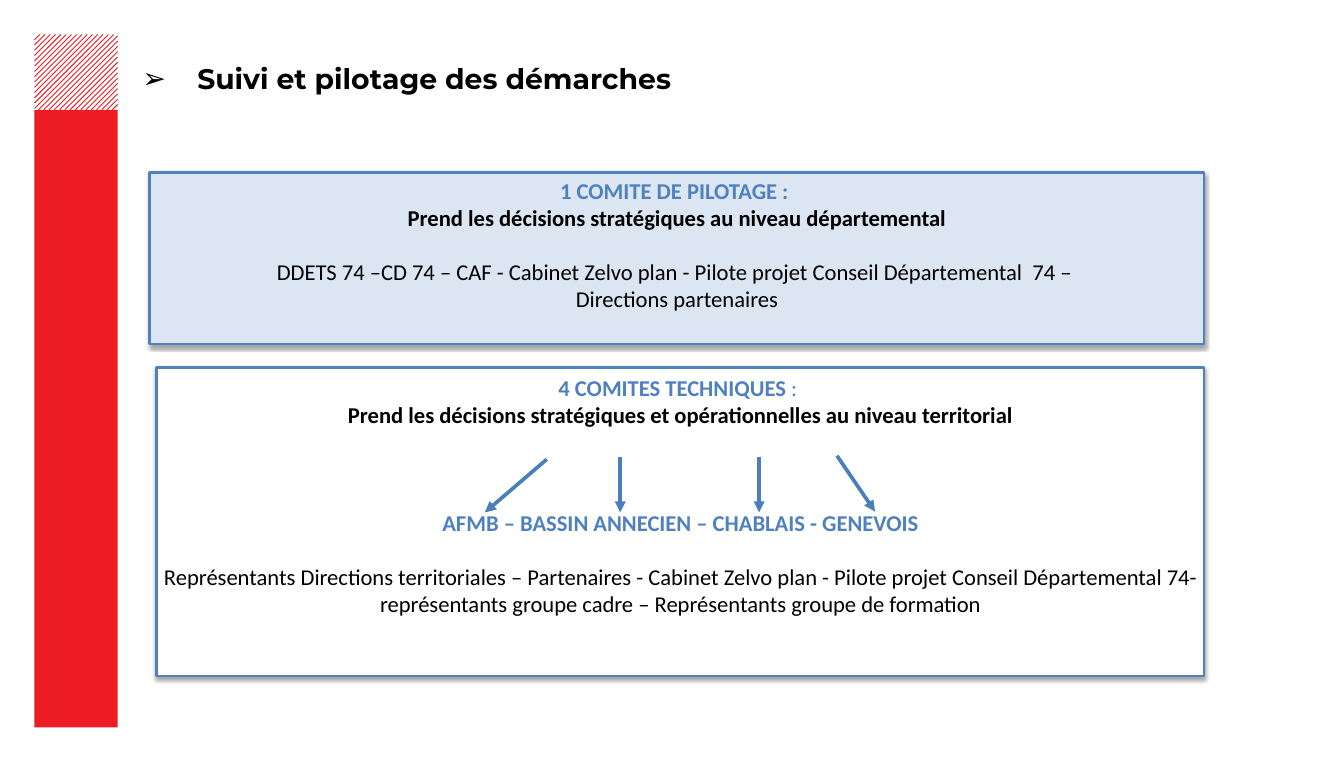
"""Build the slide on how the committees follow and steer the initiatives."""
from lxml.etree import SubElement
from pptx import Presentation
from pptx.dml.color import RGBColor
from pptx.enum.shapes import MSO_CONNECTOR, MSO_SHAPE
from pptx.enum.text import MSO_ANCHOR, MSO_AUTO_SIZE, PP_ALIGN
from pptx.oxml.ns import qn
from pptx.util import Inches, Pt

COLORS = {"red": "ED1C24", "blue": "4F81BD", "arrow": "4B7EBC",
          "pale": "DCE6F2", "white": "FFFFFF", "black": "000000"}


def color(name):
    return RGBColor.from_string(COLORS[name])


def add_line(slide, start, end, line_color, width):
    line = slide.shapes.add_connector(
        MSO_CONNECTOR.STRAIGHT, *[Inches(value) for value in (*start, *end)])
    line.line.color.rgb = color(line_color)
    line.line.width = Pt(width)
    SubElement(line._element.spPr, qn("a:effectLst"))
    return line


presentation = Presentation()
presentation.slide_width = Inches(15.19)
presentation.slide_height = Inches(8.61)
slide = presentation.slides.add_slide(presentation.slide_layouts[5])

title = slide.shapes.title
title.left, title.top = Inches(1.61), Inches(0.69)
title.width, title.height = Inches(13.36), Inches(0.39)
frame = title.text_frame
frame.margin_left = frame.margin_top = frame.margin_right = frame.margin_bottom = 0
frame.auto_size = MSO_AUTO_SIZE.NONE
frame.vertical_anchor = MSO_ANCHOR.MIDDLE
frame.text = "Suivi et pilotage des démarches"
paragraph = frame.paragraphs[0]
paragraph.alignment = PP_ALIGN.LEFT
properties = paragraph._p.get_or_add_pPr()
properties.set("marL", str(Inches(0.62)))
properties.set("indent", str(-Inches(0.62)))
SubElement(properties, qn("a:buFont"), typeface="Arial")
SubElement(properties, qn("a:buChar"), char="➢")
font = paragraph.runs[0].font
font.name, font.size, font.bold = "Montserrat", Pt(23), True
font.color.rgb = color("black")

band_left, band_top, band_width, hatch_height = 0.39, 0.39, 0.94, 0.85
bar = slide.shapes.add_shape(
    MSO_SHAPE.RECTANGLE, Inches(band_left), Inches(band_top + hatch_height),
    Inches(band_width), Inches(6.98))
bar.shadow.inherit = False
bar.fill.solid()
bar.fill.fore_color.rgb = color("red")
bar.line.fill.background()

hatch_steps = 30
for step in range(1, hatch_steps):
    offset = step * (band_width + hatch_height) / hatch_steps
    start = (band_left + min(offset, band_width), band_top + max(0, offset - band_width))
    end = (band_left + max(0, offset - hatch_height), band_top + min(offset, hatch_height))
    add_line(slide, start, end, "red", 0.75)

committees = [
    ((1.69, 1.95, 11.92, 1.94), "pale", 0.05, [
        (0, [("1 COMITE DE PILOTAGE : ", "blue", True)]),
        (0, [("Prend les décisions stratégiques au niveau départemental", "black", True)]),
        (1, [("DDETS 74 –CD 74 – CAF - Cabinet Zelvo plan - Pilote projet "
              "Conseil Départemental  74 – ", "black", False)]),
        (0, [("Directions partenaires", "black", False)]),
    ]),
    ((1.77, 4.15, 11.84, 3.49), "white", 0.07, [
        (0, [("4 COMITES TECHNIQUES ", "blue", True), (": ", "blue", False)]),
        (0, [("Prend les décisions stratégiques et opérationnelles au niveau territorial",
              "black", True)]),
        (3, [("AFMB – BASSIN ANNECIEN – CHABLAIS - GENEVOIS", "blue", True)]),
        (1, [("Représentants Directions territoriales – Partenaires - Cabinet Zelvo plan - "
              "Pilote projet Conseil Départemental 74- représentants groupe cadre – "
              "Représentants groupe de formation", "black", False)]),
    ]),
]
line_height = 22
for bounds, fill, top_margin, paragraphs in committees:
    box = slide.shapes.add_shape(MSO_SHAPE.RECTANGLE, *[Inches(value) for value in bounds])
    box.fill.solid()
    box.fill.fore_color.rgb = color(fill)
    box.line.color.rgb = color("blue")
    box.line.width = Pt(2)
    box.shadow.inherit = False
    effects = box._element.spPr.find(qn("a:effectLst"))
    shadow = SubElement(effects, qn("a:outerShdw"), blurRad=str(Pt(3)),
                        dist=str(Pt(1.8)), dir="5400000", rotWithShape="0")
    shadow_color = SubElement(shadow, qn("a:srgbClr"), val=COLORS["black"])
    SubElement(shadow_color, qn("a:alpha"), val="35000")

    frame = box.text_frame
    frame.word_wrap = True
    frame.vertical_anchor = MSO_ANCHOR.TOP
    frame.margin_left = frame.margin_right = frame.margin_bottom = Inches(0.04)
    frame.margin_top = Inches(top_margin)
    for index, (gap_lines, runs) in enumerate(paragraphs):
        paragraph = frame.add_paragraph() if index else frame.paragraphs[0]
        paragraph.alignment = PP_ALIGN.CENTER
        paragraph.line_spacing = Pt(line_height)
        paragraph.space_before = Pt(gap_lines * line_height)
        for text, text_color, bold in runs:
            run = paragraph.add_run()
            run.text = text
            run.font.name, run.font.size, run.font.bold = "Calibri", Pt(18.4), bold
            run.font.color.rgb = color(text_color)

territory_arrows = [((6.18, 5.19), (5.48, 5.79)), ((7.01, 5.16), (7.01, 5.79)),
                    ((8.58, 5.16), (8.58, 5.79)), ((9.46, 5.15), (9.89, 5.78))]
for start, end in territory_arrows:
    arrow = add_line(slide, start, end, "arrow", 3)
    SubElement(arrow.line._get_or_add_ln(), qn("a:tailEnd"), type="triangle")

presentation.save("out.pptx")
